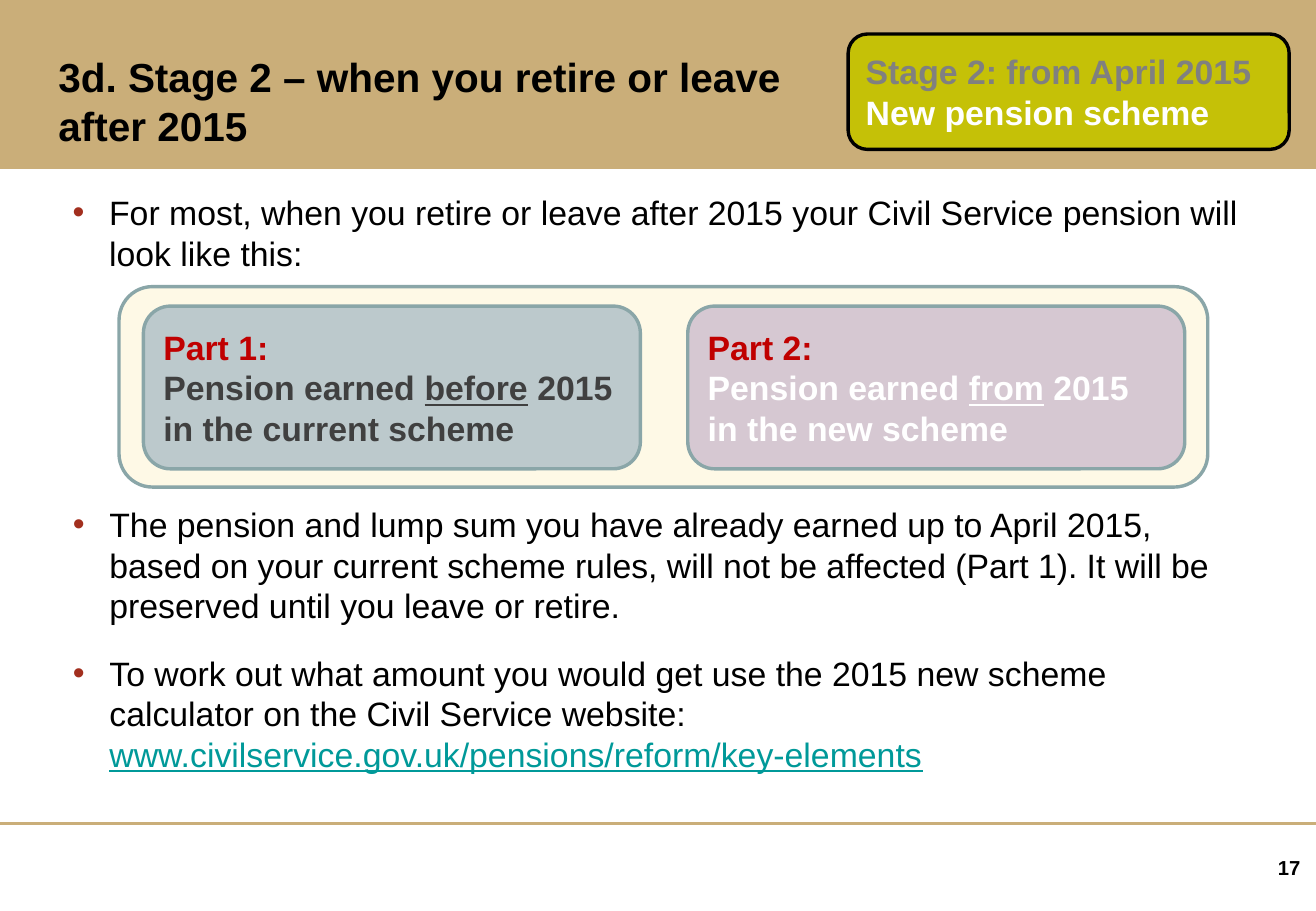
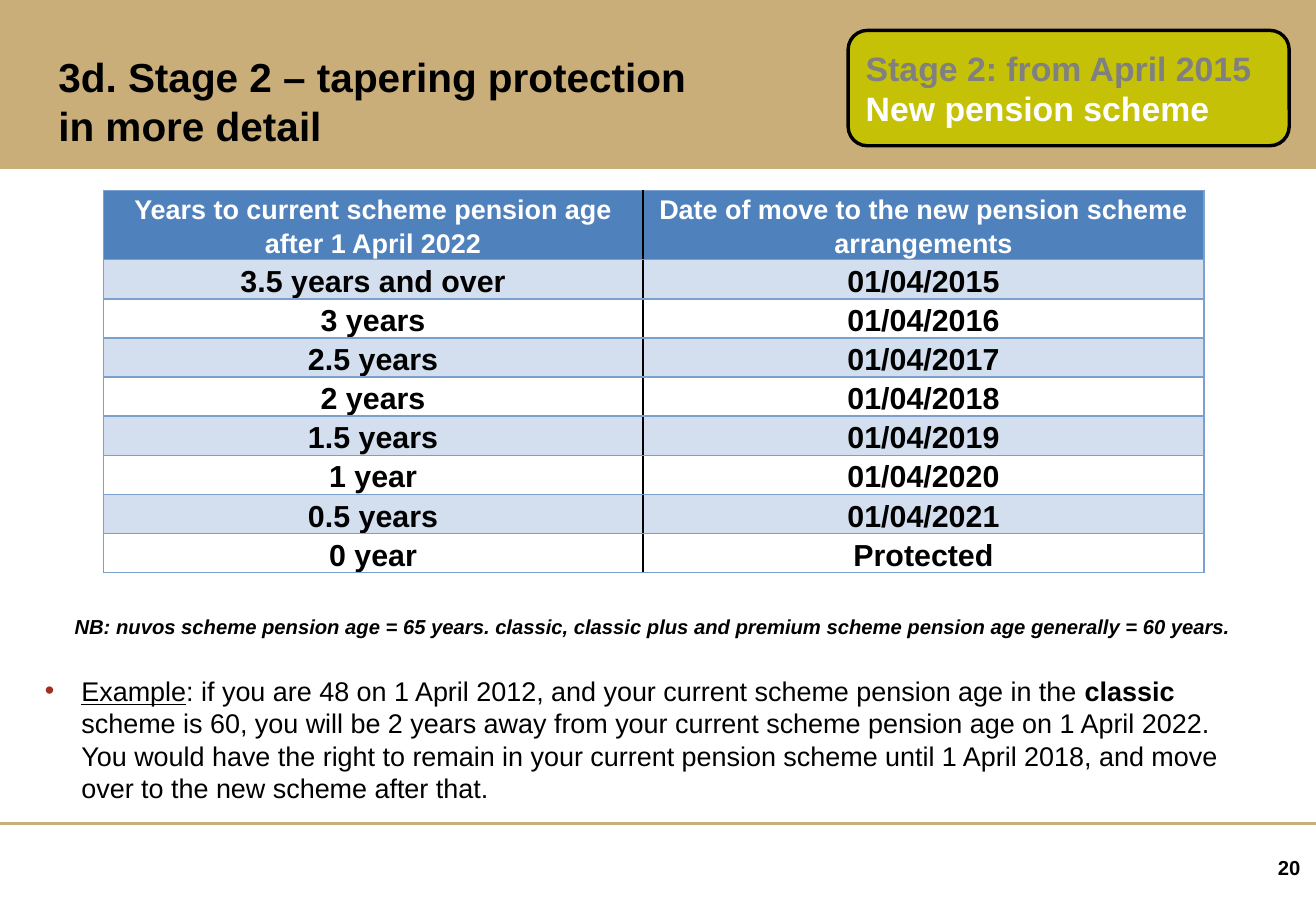
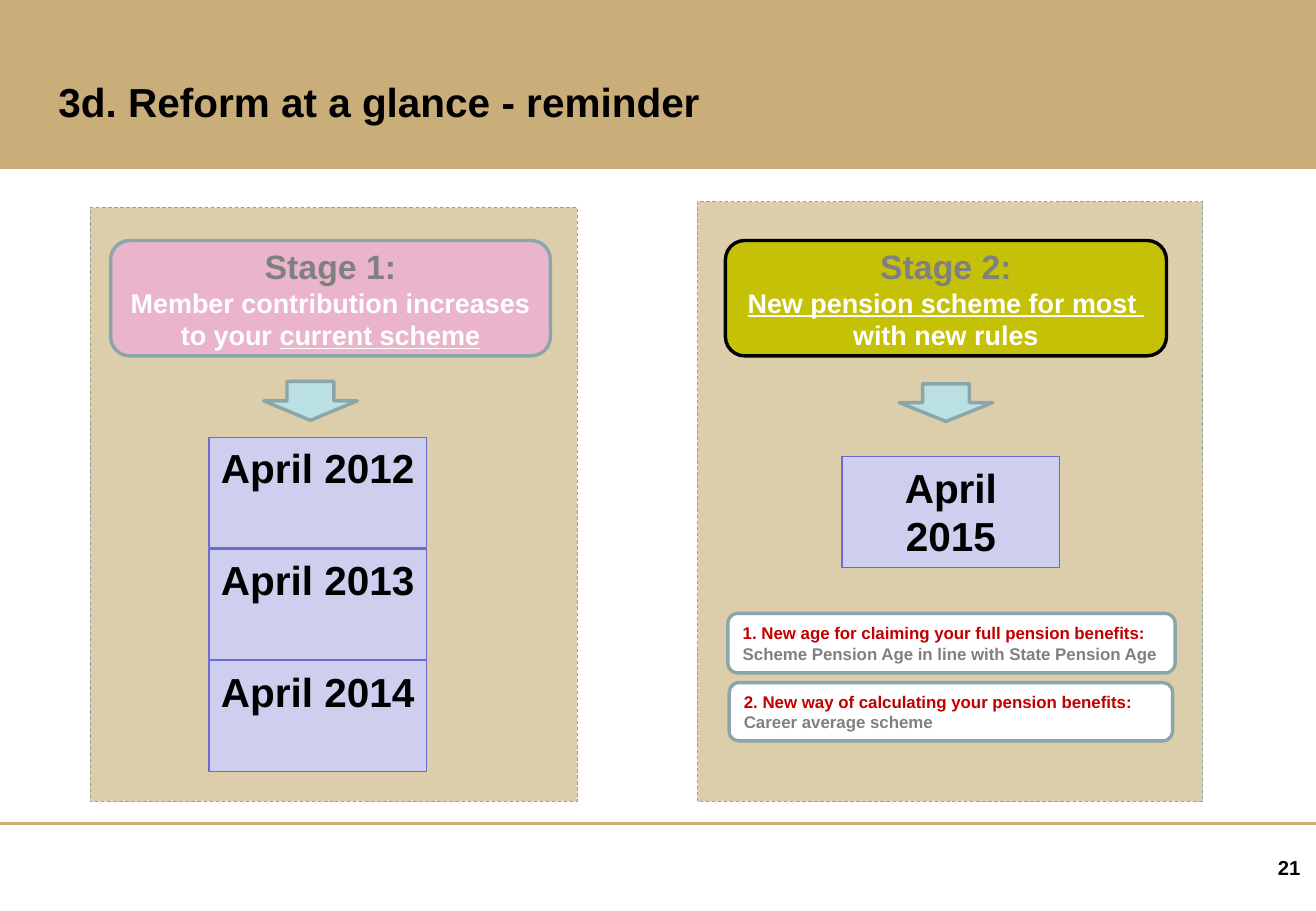
from lxml import etree
from pptx import Presentation
from pptx.dml.color import RGBColor
from pptx.enum.dml import MSO_LINE
from pptx.enum.shapes import MSO_CONNECTOR, MSO_SHAPE
from pptx.enum.text import MSO_ANCHOR, MSO_AUTO_SIZE, PP_ALIGN
from pptx.oxml.ns import qn
from pptx.util import Pt

EMU_PER_PX = 9144
SLIDE_WIDTH, SLIDE_HEIGHT = 1083, 750
FONT = "Arial"
LEFT, CENTER, RIGHT = PP_ALIGN.LEFT, PP_ALIGN.CENTER, PP_ALIGN.RIGHT
TOP, MIDDLE = MSO_ANCHOR.TOP, MSO_ANCHOR.MIDDLE
RECT, ROUNDED = MSO_SHAPE.RECTANGLE, MSO_SHAPE.ROUNDED_RECTANGLE
DOWN_ARROW, STRAIGHT = MSO_SHAPE.DOWN_ARROW, MSO_CONNECTOR.STRAIGHT
DASH, NO_AUTOFIT = MSO_LINE.DASH, MSO_AUTO_SIZE.NONE

BLACK, WHITE, GREY, DARK_GREY = "000000", "FFFFFF", "808080", "404040"
SAND, PALE_SAND, CREAM = "CAAE79", "DDCEAB", "FEF9E6"
RED, BULLET_RED, TEAL, LINK = "C00000", "A22F1E", "8AA6A8", "009999"
LIME, PINK, BLUE_GREY, MAUVE = "C5C107", "EAB4CB", "BCC9CC", "D6C8D2"
AQUA, LILAC, VIOLET = "BBE0E3", "CECEEF", "6B6BCF"
HEADER_BLUE, ROW_BLUE, GRID_BLUE = "4F81BD", "D3DFEE", "7BA0CD"


def px(length):
    """Turn whole pixels into EMU."""
    return length * EMU_PER_PX


def box(*lengths):
    """Turn left, top, width and height into EMU."""
    return [px(length) for length in lengths]


def rgb(value):
    """Turn a hex string into a colour."""
    return RGBColor.from_string(value)


def para(*runs, size=20, color=BLACK, bold=False, italic=False, align=LEFT,
         bullet=False, indent=0, before=0, after=0, spacing=None):
    """Describe one paragraph; a run is a string or a (string, overrides) pair."""
    return dict(runs=runs, size=size, color=color, bold=bold, italic=italic,
                align=align, bullet=bullet, indent=indent, before=before,
                after=after, spacing=spacing)


def set_bullet(paragraph, bullet, indent):
    """Give a paragraph its hanging indent and its bullet, or none."""
    properties = paragraph._p.get_or_add_pPr()
    properties.set("marL", str(px(indent)))
    properties.set("indent", str(-px(indent)))
    if bullet:
        color = etree.SubElement(properties, qn("a:buClr"))
        etree.SubElement(color, qn("a:srgbClr")).set("val", BULLET_RED)
        etree.SubElement(properties, qn("a:buFont")).set("typeface", FONT)
        etree.SubElement(properties, qn("a:buChar")).set("char", "•")
    else:
        etree.SubElement(properties, qn("a:buNone"))


def write(frame, paragraphs, anchor=TOP, side_margin=10):
    """Fill a text frame with described paragraphs."""
    frame.word_wrap = True
    frame.auto_size = NO_AUTOFIT
    frame.vertical_anchor = anchor
    frame.margin_left = frame.margin_right = px(side_margin)
    for index, content in enumerate(paragraphs):
        paragraph = frame.add_paragraph() if index else frame.paragraphs[0]
        format_paragraph(paragraph, content)


def format_paragraph(paragraph, content):
    """Apply a described paragraph's layout, font and runs."""
    set_bullet(paragraph, content["bullet"], content["indent"])
    paragraph.alignment = content["align"]
    paragraph.space_before = Pt(content["before"])
    paragraph.space_after = Pt(content["after"])
    if content["spacing"]:
        paragraph.line_spacing = content["spacing"]
    font = paragraph.font
    font.name, font.size = FONT, Pt(content["size"])
    font.bold, font.italic = content["bold"], content["italic"]
    font.color.rgb = rgb(content["color"])
    for item in content["runs"]:
        text, overrides = (item, {}) if isinstance(item, str) else item
        for index, line in enumerate(text.split("\n")):
            if index:
                paragraph.add_line_break()
            add_run(paragraph, line, overrides)


def add_run(paragraph, text, overrides):
    """Add one run with the settings that differ from its paragraph."""
    run = paragraph.add_run()
    run.text = text
    if "underline" in overrides:
        run.font.underline = overrides["underline"]
    if "bold" in overrides:
        run.font.bold = overrides["bold"]
    if "color" in overrides:
        run.font.color.rgb = rgb(overrides["color"])


def add_panel(slide, kind, place, fill, line, weight, paragraphs=(),
              anchor=MIDDLE, side_margin=10):
    """Draw a filled, outlined preset shape with optional text."""
    panel = slide.shapes.add_shape(kind, *box(*place))
    panel.shadow.inherit = False
    panel.fill.solid()
    panel.fill.fore_color.rgb = rgb(fill)
    panel.line.color.rgb = rgb(line)
    panel.line.width = Pt(weight)
    if paragraphs:
        write(panel.text_frame, paragraphs, anchor, side_margin)
    return panel


def add_text(slide, place, paragraphs, anchor=TOP):
    """Add a plain text box."""
    write(slide.shapes.add_textbox(*box(*place)).text_frame, paragraphs, anchor)


def fill_body(slide, place, paragraphs):
    """Move and fill the body placeholder."""
    body = slide.placeholders[1]
    body.left, body.top, body.width, body.height = box(*place)
    write(body.text_frame, paragraphs)


def decorate_master(master, slide):
    """Put the header band, footer rule and title place on the master."""
    title = master.placeholders[0]
    title.left, title.top, title.width, title.height = box(38, 28, 975, 110)
    band = add_panel(slide, RECT, (0, 0, SLIDE_WIDTH, 139), SAND, SAND, 0.75)
    rule = slide.shapes.add_connector(STRAIGHT, *box(0, 678, SLIDE_WIDTH, 678))
    rule.line.color.rgb = rgb(SAND)
    rule.line.width = Pt(2.25)
    etree.SubElement(rule.element.spPr, qn("a:effectLst"))
    for offset, decoration in enumerate((band, rule)):
        decoration.element[0][0].set("id", str(100 + offset))
        master.shapes.element.insert(2 + offset, decoration.element)


def start_slide(prs, layout_index, title, number):
    """Add a slide with its title and page number."""
    slide = prs.slides.add_slide(prs.slide_layouts[layout_index])
    write(slide.shapes.title.text_frame,
          [para(title, size=24, bold=True)], MIDDLE)
    add_text(slide, (698, 689, 382, 50),
             [para(number, size=12, bold=True, align=RIGHT)], MIDDLE)
    return slide


def add_stage_badge(slide, top):
    """Add the stage 2 badge in the header band."""
    add_panel(slide, ROUNDED, (698, top, 363, 95), LIME, BLACK, 2,
              [para("Stage 2: from April 2015", color=GREY, bold=True),
               para("New pension scheme", color=WHITE, bold=True)])


def set_borders(cell, colors):
    """Give a cell 1 pt borders, coloured by side."""
    properties = cell._tc.get_or_add_tcPr()
    for index, (side, color) in enumerate(colors.items()):
        border = etree.Element(qn(f"a:{side}"), w=str(Pt(1)))
        fill = etree.SubElement(border, qn("a:solidFill"))
        etree.SubElement(fill, qn("a:srgbClr")).set("val", color)
        properties.insert(index, border)


def add_taper_table(slide, rows):
    """Add the two-column table of years and dates."""
    table = slide.shapes.add_table(len(rows), 2, *box(85, 157, 906, 295)).table
    for column, width in zip(table.columns, (444, 462)):
        column.width = px(width)
    for row_index, texts in enumerate(rows):
        header = row_index == 0
        table.rows[row_index].height = px(55 if header else 30)
        fill = HEADER_BLUE if header else ROW_BLUE if row_index % 2 else WHITE
        for column_index, text in enumerate(texts):
            cell = table.cell(row_index, column_index)
            cell.margin_left = cell.margin_right = px(7)
            cell.margin_top = cell.margin_bottom = 0
            cell.fill.solid()
            cell.fill.fore_color.rgb = rgb(fill)
            set_borders(cell, {
                "lnL": BLACK if column_index else GRID_BLUE,
                "lnR": GRID_BLUE if column_index else BLACK,
                "lnT": GRID_BLUE, "lnB": GRID_BLUE})
            format_paragraph(
                cell.text_frame.paragraphs[0],
                para(text, size=16 if header else 18, bold=True, align=CENTER,
                     color=WHITE if header else BLACK, spacing=1.15))


def add_stage_column(slide, panel, badge, fill, line, stage, details, arrow):
    """Add a dashed panel with its stage badge and arrow."""
    add_panel(slide, RECT, panel, PALE_SAND, TEAL, 0.5).line.dash_style = DASH
    lines = [para(stage, color=GREY, bold=True, align=CENTER)]
    lines += [para(*runs, size=16, color=WHITE, bold=True, align=CENTER)
              for runs in details]
    add_panel(slide, ROUNDED, badge, fill, line, 2, lines)
    add_panel(slide, DOWN_ARROW, arrow, AQUA, TEAL, 2)


def add_date(slide, left, top, date, side_margin):
    """Add a date box."""
    add_panel(slide, RECT, (left, top, 179, 91), LILAC, VIOLET, 0.75,
              [para(date, size=24, bold=True, align=CENTER)],
              TOP, side_margin)


def build_retirement(prs):
    """Build the slide on retiring or leaving after 2015."""
    underlined = {"underline": True}
    slide = start_slide(
        prs, 1, "3d. Stage 2 – when you retire or leave\nafter 2015", "17")
    decorate_master(prs.slide_master, slide)
    add_panel(slide, ROUNDED, (98, 236, 896, 165), CREAM, TEAL, 2)
    parts = [
        (118, BLUE_GREY, DARK_GREY, "Part 1:", "before",
         " 2015 in the current scheme"),
        (566, MAUVE, WHITE, "Part 2:", "from", " 2015 in the new scheme")]
    for left, fill, color, name, when, scheme in parts:
        add_panel(slide, ROUNDED, (left, 252, 409, 134), fill, TEAL, 2,
                  [para(name, color=RED, bold=True),
                   para("Pension earned ", (when, underlined), scheme,
                        color=color, bold=True)])
    add_stage_badge(slide, 28)
    add_text(slide, (50, 153, 983, 81), [
        para("For most, when you retire or leave after 2015 your Civil Service "
             "pension will look like this:", bullet=True, indent=30)])
    fill_body(slide, (50, 410, 983, 232), [
        para("The pension and lump sum you have already earned up to April "
             "2015, based on your current scheme rules, will not be affected "
             "(Part 1). It will be preserved until you leave or retire.",
             bullet=True, indent=30, after=12),
        para("To work out what amount you would get use the 2015 new scheme "
             "calculator on the Civil Service website: ",
             ("www.civilservice.gov.uk/pensions/reform/key-elements",
              {"underline": True, "color": LINK}),
             bullet=True, indent=30, before=4)])


def build_tapering(prs):
    """Build the slide on tapering protection."""
    slide = start_slide(
        prs, 1, "3d. Stage 2 – tapering protection\nin more detail", "20")
    add_taper_table(slide, [
        ("Years to current scheme pension age after 1 April 2022",
         "Date of move to the new pension scheme arrangements"),
        ("3.5 years and over", "01/04/2015"),
        ("3 years", "01/04/2016"),
        ("2.5 years", "01/04/2017"),
        ("2 years", "01/04/2018"),
        ("1.5 years", "01/04/2019"),
        ("1 year", "01/04/2020"),
        ("0.5 years", "01/04/2021"),
        ("0 year", "Protected")])
    add_stage_badge(slide, 25)
    fill_body(slide, (27, 501, 1021, 145), [
        para("NB: nuvos scheme pension age = 65 years. classic, classic plus "
             "and premium scheme pension age generally = 60 years.",
             size=12, bold=True, italic=True, align=CENTER, indent=30,
             after=18),
        para(("Example", {"underline": True}),
             ": if you are 48 on 1 April 2012, and your current scheme pension "
             "age in the ", ("classic ", {"bold": True}),
             "scheme is 60, you will be 2 years away from your current scheme "
             "pension age on 1 April 2022. You would have the right to remain "
             "in your current pension scheme until 1 April 2018, and move over "
             "to the new scheme after that.",
             size=16, bullet=True, indent=30, before=3, after=6)])


def build_reminder(prs):
    """Build the slide that sums up both stages."""
    underlined = {"underline": True}
    slide = start_slide(prs, 5, "3d. Reform at a glance - reminder", "21")
    add_stage_column(
        slide, (574, 166, 416, 494), (597, 198, 363, 95), LIME, BLACK,
        "Stage 2:", [[("New pension scheme for most ", underlined)],
                     ["with new rules"]], (740, 316, 77, 31))
    add_stage_column(
        slide, (74, 171, 401, 489), (91, 198, 362, 95), PINK, TEAL,
        "Stage 1:", [["Member contribution increases to your ",
                      ("current scheme", underlined)]], (217, 314, 77, 32))
    for index in range(3):
        add_date(slide, 172, 360 + 92 * index, f"April {2012 + index}", 5)
    add_date(slide, 693, 376, "April 2015", 20)
    changes = [
        ((599, 505, 368, 49),
         "1. New age for claiming your full pension benefits:",
         "Scheme Pension Age in line with State Pension Age"),
        ((600, 562, 365, 48),
         "2. New way of calculating your pension benefits:",
         "Career average scheme")]
    for place, change, detail in changes:
        add_panel(slide, ROUNDED, place, WHITE, TEAL, 2,
                  [para(change, size=10, color=RED, bold=True),
                   para(detail, size=10, color=GREY, bold=True)])


def main():
    """Build and save the presentation."""
    prs = Presentation()
    prs.slide_width, prs.slide_height = px(SLIDE_WIDTH), px(SLIDE_HEIGHT)
    build_retirement(prs)
    build_tapering(prs)
    build_reminder(prs)
    prs.save("out.pptx")


if __name__ == "__main__":
    main()
